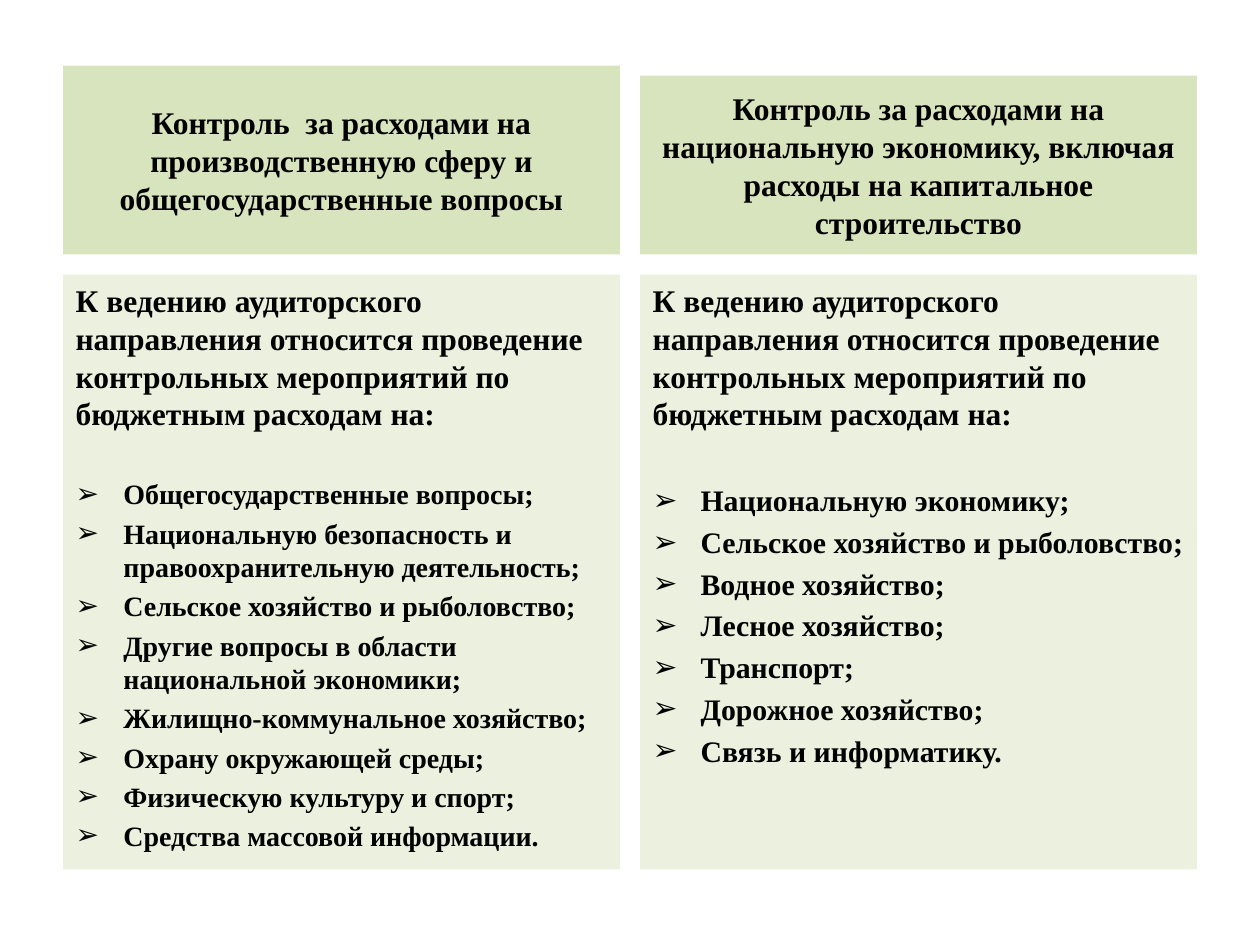
from pptx import Presentation
from pptx.dml.color import RGBColor as Rgb
from pptx.enum.text import MSO_ANCHOR as Anchor, MSO_AUTO_SIZE as Auto, PP_ALIGN as Align
from pptx.oxml.ns import qn
from pptx.util import Inches, Pt
from lxml.etree import SubElement

HUES = {"head": "D7E4BD", "body": "EBF1DE", "text": "000000"}
FONT = {"name": "Times New Roman", "bold": True}
EDGE, WIDE, GAP = 0.5, 4.42, 0.16
BASE, TALL = 2.18, 4.72

INTRO = ("К ведению аудиторского направления относится проведение "
         "контрольных мероприятий по бюджетным расходам на:")
COLS = [
    {"head": "Контроль  за расходами на производственную сферу и общегосударственные вопросы",
     "top": 0.52, "size": 16, "gap": 22.4,
     "items": ["Общегосударственные вопросы;",
               "Национальную безопасность и правоохранительную деятельность;",
               "Сельское хозяйство и рыболовство;",
               "Другие вопросы в области национальной экономики;",
               "Жилищно-коммунальное хозяйство;",
               "Охрану окружающей среды;",
               "Физическую культуру и спорт;",
               "Средства массовой информации."]},
    {"head": "Контроль за расходами на национальную экономику, включая "
             "расходы на капитальное строительство",
     "top": 0.6, "size": 17, "gap": 25.2,
     "items": ["Национальную экономику;",
               "Сельское хозяйство и рыболовство;",
               "Водное хозяйство;",
               "Лесное хозяйство;",
               "Транспорт;",
               "Дорожное хозяйство;",
               "Связь и информатику."]},
]


def place(box, hue, anchor, *rect):
    """Set a placeholder's frame, fill and text settings."""
    for key, val in zip(("left", "top", "width", "height"), rect):
        setattr(box, key, Inches(val))
    box.fill.solid()
    box.fill.fore_color.rgb = Rgb.from_string(HUES[hue])
    frame = box.text_frame
    form = {"word_wrap": True, "auto_size": Auto.NONE, "vertical_anchor": anchor}
    for key, val in form.items():
        setattr(frame, key, val)
    return frame


def write(par, text, size, mark=None):
    """Fill a paragraph, with a hanging bullet if a mark is given."""
    run = par.add_run()
    run.text = text
    for key, val in {**FONT, "size": Pt(size)}.items():
        setattr(run.font, key, val)
    run.font.color.rgb = Rgb.from_string(HUES["text"])
    props = par._p.get_or_add_pPr()
    dent = Inches(0.38) if mark else 0
    props.set("marL", str(dent))
    props.set("indent", str(-dent))
    if mark:
        SubElement(props, qn("a:buFont"), typeface="Arial")
        SubElement(props, qn("a:buChar"), char=mark)
    else:
        SubElement(props, qn("a:buNone"))


deck = Presentation()
deck.slide_width, deck.slide_height = Inches(10), Inches(7.5)

# Comparison layout without its title
slide = deck.slides.add_slide(deck.slide_layouts[4])
title = slide.shapes.title._element
title.getparent().remove(title)
slots = list(slide.placeholders)

for n, col in enumerate(COLS):
    left = EDGE + n * (WIDE + GAP)
    head, body = slots[2 * n:2 * n + 2]

    # Heading
    frame = place(head, "head", Anchor.MIDDLE, left, col["top"], WIDE, BASE - GAP - col["top"])
    par = frame.paragraphs[0]
    par.alignment = Align.CENTER
    write(par, col["head"], 18)

    # Intro and list
    frame = place(body, "body", Anchor.TOP, left, BASE, WIDE, TALL)
    par = frame.paragraphs[0]
    par.space_after = Pt(col["gap"])
    write(par, INTRO, 18)
    for item in col["items"]:
        write(frame.add_paragraph(), item, col["size"], "➢")

deck.save("out.pptx")
